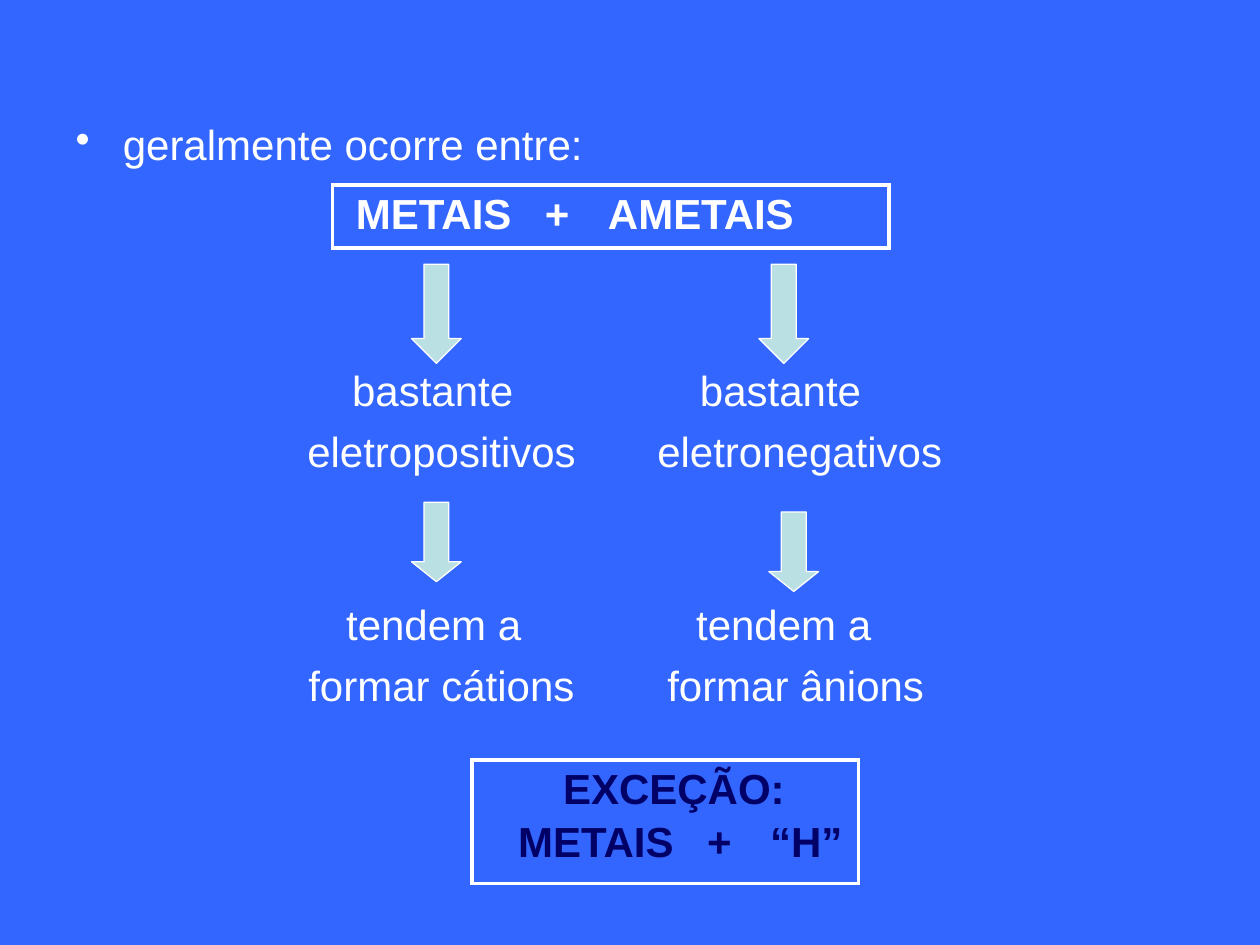
from dataclasses import dataclass

from lxml.etree import SubElement
from pptx import Presentation
from pptx.dml.color import RGBColor as RGB
from pptx.enum.shapes import MSO_SHAPE as Shape
from pptx.oxml.ns import qn
from pptx.util import Pt


@dataclass(frozen=True)
class Theme:
    background: RGB = RGB(0x33, 0x66, 0xFF)
    light: RGB = RGB(0xFF, 0xFF, 0xFF)
    dark: RGB = RGB(0x00, 0x00, 0x66)
    arrow: RGB = RGB(0xBB, 0xE0, 0xE3)
    font: str = "Arial"
    size: float = 24
    frame_width: float = 2.25
    arrow_line: float = 0.75


@dataclass(frozen=True)
class Line:
    text: str
    indent: float = 0
    tabs: tuple[float, ...] = ()


@dataclass(frozen=True)
class Block:
    left: float
    top: float
    lines: tuple[Line, ...]


@dataclass(frozen=True)
class Arrow:
    left: float
    top: float
    height: float
    head: float


@dataclass(frozen=True)
class Frame:
    left: float
    top: float
    width: float
    height: float
    margin: float
    color: RGB
    lines: tuple[Line, ...]


THEME = Theme()
ARROW_WIDTH = 28.4
BLOCK_WIDTH = 190

BLOCKS = (
    Block(175.6, 208, (Line("bastante", 25.6), Line("eletropositivos"))),
    Block(375.6, 208, (Line("bastante", 24.4), Line("eletronegativos"))),
    Block(175.6, 342, (Line("tendem a", 22.2), Line("formar cátions", 0.6))),
    Block(375.6, 342, (Line("tendem a", 22.2), Line("formar ânions", 5.7))),
)
ARROWS = (
    Arrow(235.2, 151, 56.7, 0.5),
    Arrow(433.7, 151, 56.7, 0.5),
    Arrow(235.2, 287, 45.4, 0.4),
    Arrow(439.4, 292.6, 45.4, 0.4),
)
FRAMES = (
    Frame(190.1, 105.8, 318, 34, 13.3, THEME.light,
          (Line("METAIS\t+\tAMETAIS", tabs=(129.3, 183.5)),)),
    Frame(269.6, 434.2, 221, 70.6, 26.5, THEME.dark,
          (Line("EXCEÇÃO:", 25.7),
           Line("METAIS\t+\t“H”", tabs=(109.9, 143.4)))),
)


def write(p, text: str, *, color: RGB = THEME.light, bold: bool = False,
          indent: float = 0, hanging: float = 0, before: float = 0,
          tabs: tuple[float, ...] = (), bullet: str = "") -> None:
    p.space_before = Pt(before)
    p_pr = p._p.get_or_add_pPr()
    p_pr.set("marL", str(Pt(indent)))
    p_pr.set("indent", str(-Pt(hanging)))
    if bullet:
        SubElement(p_pr, qn("a:buChar")).set("char", bullet)
    if tabs:
        stops = SubElement(p_pr, qn("a:tabLst"))
        for tab in tabs:
            stop = SubElement(stops, qn("a:tab"))
            stop.set("pos", str(Pt(tab)))
            stop.set("algn", "l")
    r = p.add_run()
    r.text = text
    r.font.name, r.font.size, r.font.bold = THEME.font, Pt(THEME.size), bold
    r.font.color.rgb = color


def write_lines(tf, lines: tuple[Line, ...], *, gap: float, **style) -> None:
    for i, line in enumerate(lines):
        p = tf.add_paragraph() if i else tf.paragraphs[0]
        write(p, line.text, indent=line.indent, tabs=line.tabs,
              before=gap if i else 0, **style)


def add_text_frame(s, left: float, top: float, width: float, height: float):
    """Add a wrapping text box without insets and return its text frame."""
    tf = s.shapes.add_textbox(Pt(left), Pt(top), Pt(width), Pt(height)).text_frame
    tf.word_wrap = True
    tf.margin_left = tf.margin_right = tf.margin_top = tf.margin_bottom = 0
    return tf


def draw_block(s, block: Block) -> None:
    tf = add_text_frame(s, block.left, block.top, BLOCK_WIDTH, 62)
    write_lines(tf, block.lines, gap=6.1)


def draw_arrow(s, arrow: Arrow) -> None:
    sp = s.shapes.add_shape(Shape.DOWN_ARROW, Pt(arrow.left), Pt(arrow.top),
                            Pt(ARROW_WIDTH), Pt(arrow.height))
    sp.shadow.inherit = False
    sp.adjustments[0], sp.adjustments[1] = 0.5, arrow.head
    sp.fill.solid()
    sp.fill.fore_color.rgb = THEME.arrow
    sp.line.color.rgb = THEME.light
    sp.line.width = Pt(THEME.arrow_line)


def set_borders(cell) -> None:
    tc_pr = cell._tc.get_or_add_tcPr()
    for i, side in enumerate(("lnL", "lnR", "lnT", "lnB")):
        ln = tc_pr.makeelement(qn(f"a:{side}"), {"w": str(Pt(THEME.frame_width))})
        fill = SubElement(ln, qn("a:solidFill"))
        SubElement(fill, qn("a:srgbClr")).set("val", str(THEME.light))
        tc_pr.insert(i, ln)


def draw_frame(s, frame: Frame) -> None:
    """Draw a bordered one-cell table."""
    table = s.shapes.add_table(1, 1, Pt(frame.left), Pt(frame.top),
                               Pt(frame.width), Pt(frame.height)).table
    table.first_row = table.horz_banding = False
    cell = table.cell(0, 0)
    cell.fill.background()
    cell.margin_left, cell.margin_right = Pt(frame.margin), Pt(4)
    cell.margin_top = cell.margin_bottom = Pt(3.6)
    write_lines(cell.text_frame, frame.lines, gap=4, color=frame.color, bold=True)
    set_borders(cell)


def main() -> None:
    prs = Presentation()
    prs.slide_width, prs.slide_height = Pt(720), Pt(540)
    s = prs.slides.add_slide(prs.slide_layouts[6])
    s.background.fill.solid()
    s.background.fill.fore_color.rgb = THEME.background

    intro = add_text_frame(s, 43.2, 68, 634, 28)
    write(intro.paragraphs[0], "geralmente ocorre entre:",
          indent=27, hanging=27, bullet="•")
    for block in BLOCKS:
        draw_block(s, block)
    for arrow in ARROWS:
        draw_arrow(s, arrow)
    for frame in FRAMES:
        draw_frame(s, frame)
    prs.save("out.pptx")


if __name__ == "__main__":
    main()
